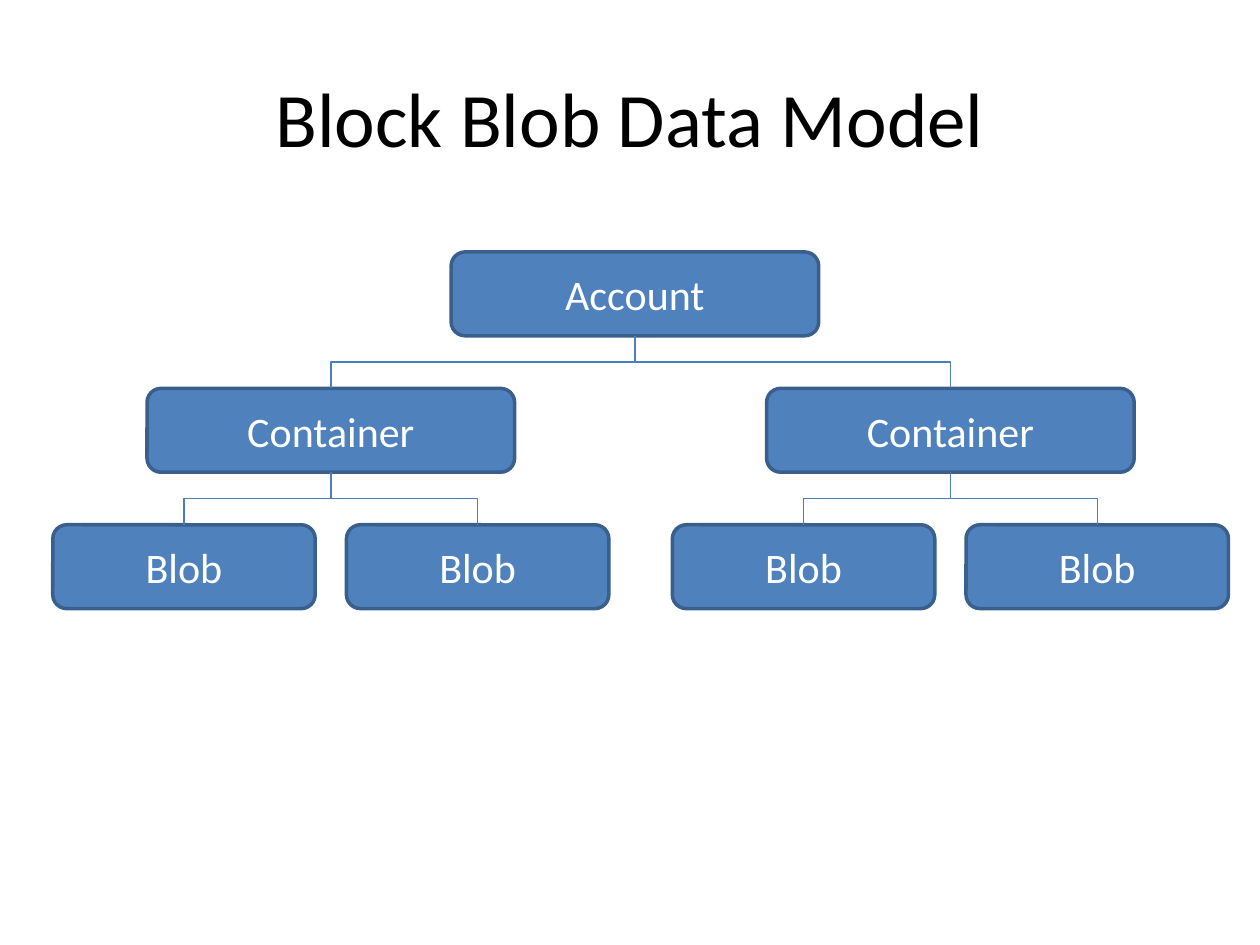
from lxml import etree
from pptx import Presentation
from pptx import util as u
from pptx.dml.color import RGBColor
from pptx.enum import shapes, text
from pptx.oxml.ns import qn

BLACK = RGBColor(0x00, 0x00, 0x00)
WHITE = RGBColor(0xFF, 0xFF, 0xFF)
BLUE = RGBColor(0x4F, 0x81, 0xBD)
BORDER = RGBColor(0x3A, 0x5F, 0x8C)
LINK = RGBColor(0x4B, 0x7E, 0xBC)

# Tree measures in centimetres
TOP, ROW_STEP, BOX_HEIGHT = 5.08, 2.75, 1.69
WIDE, NARROW = 7.41, 5.29
ACCOUNT_CENTER = 12.8
CONTAINER_CENTERS = (6.67, 19.16)
BLOB_OFFSET = 2.96


class TreeSlide:
    font = "Calibri"

    def __init__(self, page):
        self.page = page

    def label(self, box, words, size, color):
        frame = box.text_frame
        frame.word_wrap = True
        frame.vertical_anchor = text.MSO_ANCHOR.MIDDLE
        para = frame.paragraphs[0]
        para.alignment = text.PP_ALIGN.CENTER
        span = para.add_run()
        span.text = words
        span.font.name = self.font
        span.font.size = u.Pt(size)
        span.font.color.rgb = color

    def title(self, words):
        box = self.page.shapes.add_textbox(
            u.Cm(1.27), u.Cm(0.76), u.Cm(22.86), u.Cm(3.18))
        self.label(box, words, 44, BLACK)

    def node(self, words, center, level, width):
        box = self.page.shapes.add_shape(
            shapes.MSO_SHAPE.ROUNDED_RECTANGLE,
            u.Cm(center - width / 2), u.Cm(TOP + level * ROW_STEP),
            u.Cm(width), u.Cm(BOX_HEIGHT))
        box.shadow.inherit = False
        box.fill.solid()
        box.fill.fore_color.rgb = BLUE
        box.line.color.rgb = BORDER
        box.line.width = u.Pt(2)
        self.label(box, words, 24, WHITE)
        return box

    def branch(self, parent, child):
        link = self.page.shapes.add_connector(
            shapes.MSO_CONNECTOR.ELBOW, 0, 0, 0, 0)
        link.begin_connect(parent, 2)
        link.end_connect(child, 0)
        link.line.color.rgb = LINK
        link.line.width = u.Pt(0.75)
        etree.SubElement(link._element.spPr, qn("a:effectLst"))

        # Turn the elbow a quarter so that it leaves downwards
        start_x = parent.left + parent.width // 2
        end_x = child.left + child.width // 2
        start_y, end_y = parent.top + parent.height, child.top
        drop, reach = end_y - start_y, abs(end_x - start_x)
        link.left = (start_x + end_x - drop) // 2
        link.top = (start_y + end_y - reach) // 2
        link.width, link.height = drop, reach
        to_right = end_x > start_x
        frame = link._element.spPr.find(qn("a:xfrm"))
        frame.set("rot", str((270 if to_right else 90) * 60000))
        frame.set("flipH", "1" if to_right else "0")
        frame.set("flipV", "0")


def main():
    deck = Presentation()
    deck.slide_width, deck.slide_height = u.Cm(25.4), u.Cm(19.05)
    slide = TreeSlide(deck.slides.add_slide(deck.slide_layouts[6]))

    slide.title("Block Blob Data Model")

    # Boxes, level by level
    account = slide.node("Account", ACCOUNT_CENTER, 0, WIDE)
    containers = [slide.node("Container", center, 1, WIDE)
                  for center in CONTAINER_CENTERS]
    pairs = [(account, container) for container in containers]
    for container, center in zip(containers, CONTAINER_CENTERS):
        for side in (-1, 1):
            blob = slide.node("Blob", center + side * BLOB_OFFSET, 2, NARROW)
            pairs.append((container, blob))

    # Branches between the levels
    for parent, child in pairs:
        slide.branch(parent, child)

    deck.save("out.pptx")


if __name__ == "__main__":
    main()
